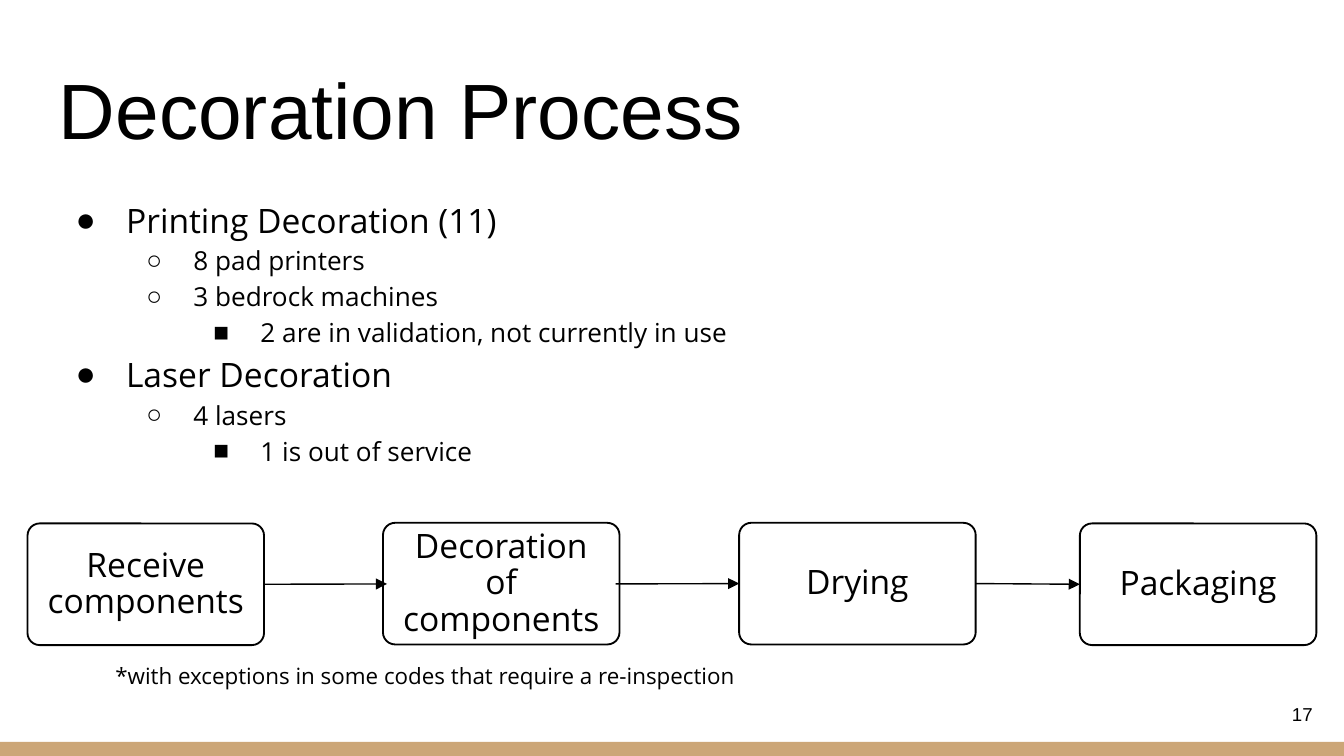
import dataclasses
import typing

import lxml.etree
import pptx
import pptx.dml.color
import pptx.enum.shapes
import pptx.enum.text
import pptx.oxml.ns
import pptx.util

PX = 4572
BLACK = pptx.dml.color.RGBColor(0x00, 0x00, 0x00)
WHITE = pptx.dml.color.RGBColor(0xFF, 0xFF, 0xFF)
TAN = pptx.dml.color.RGBColor(0xCC, 0xA6, 0x77)
SANS = "Open Sans"
ARIAL = "Arial"
ALIGN = pptx.enum.text.PP_ALIGN
ANCHOR = pptx.enum.text.MSO_ANCHOR
SHAPE = pptx.enum.shapes.MSO_SHAPE
LEFT, RIGHT = 1, 3
INSET = 6


@dataclasses.dataclass(frozen=True)
class Step:
    text: str
    left: int
    top: int


@dataclasses.dataclass(frozen=True)
class Item:
    text: str
    level: int = 0


@dataclasses.dataclass(frozen=True)
class Bullet:
    mark: str
    size: int
    hang: int


STEPS = [
    Step("Receive components", 41, 779),
    Step("Decoration of components", 570, 778),
    Step("Drying", 1100, 778),
    Step("Packaging", 1607, 779),
]
ITEMS = [
    Item("Printing Decoration (11)"),
    Item("8 pad printers", 1),
    Item("3 bedrock machines", 1),
    Item("2 are in validation, not currently in use", 2),
    Item("Laser Decoration"),
    Item("4 lasers", 1),
    Item("1 is out of service", 2),
]
BULLETS = [Bullet("●", 18, 75), Bullet("○", 14, 70), Bullet("■", 14, 70)]


def emu(*values: int) -> list[int]:
    return [value * PX for value in values]


def add_tag(parent: typing.Any, tag: str, **attrs: str) -> typing.Any:
    return lxml.etree.SubElement(parent, pptx.oxml.ns.qn(tag), attrs)


def style(para: typing.Any, size: int, font: str, space: float) -> None:
    para.line_spacing = space
    for run in para.runs:
        run.font.size = pptx.util.Pt(size)
        run.font.name = font
        run.font.color.rgb = BLACK


def add_text(shapes: typing.Any, box: tuple[int, int, int, int], text: str,
             size: int, font: str = SANS, align: typing.Any = ALIGN.LEFT,
             anchor: typing.Any = ANCHOR.TOP, space: float = 1.0,
             margin: int = 20) -> typing.Any:
    shape = shapes.add_textbox(*emu(*box))
    frame = shape.text_frame
    frame.word_wrap = True
    frame.vertical_anchor = anchor
    frame.margin_left = frame.margin_right = margin * PX
    frame.margin_top = frame.margin_bottom = margin * PX
    frame.text = text
    for para in frame.paragraphs:
        para.alignment = align
        style(para, size, font, space)
    return shape


def add_step(shapes: typing.Any, step: Step) -> tuple[typing.Any, typing.Any]:
    group = shapes.add_group_shape()
    card = group.shapes.add_shape(
        SHAPE.ROUNDED_RECTANGLE, *emu(step.left, step.top, 352, 181))
    card.adjustments[0] = 0.1
    card.shadow.inherit = False
    card.fill.solid()
    card.fill.fore_color.rgb = WHITE
    card.line.color.rgb = BLACK
    card.line.width = pptx.util.Pt(1)
    label = add_text(
        group.shapes, (step.left + INSET, step.top + INSET, 340, 170),
        step.text, 18, align=ALIGN.CENTER, anchor=ANCHOR.MIDDLE,
        space=0.9, margin=16)
    return card, label


def add_arrow(shapes: typing.Any, start: typing.Any, end: typing.Any) -> None:
    arrow = shapes.add_connector(
        pptx.enum.shapes.MSO_CONNECTOR.STRAIGHT, 0, 0, 0, 0)
    arrow.begin_connect(start, RIGHT)
    arrow.end_connect(end, LEFT)
    arrow.line.color.rgb = BLACK
    arrow.line.width = pptx.util.Pt(0.75)
    add_tag(arrow.line._get_or_add_ln(), "a:tailEnd", type="triangle")
    add_tag(arrow._element.spPr, "a:effectLst")


def add_list(shapes: typing.Any, items: list[Item]) -> None:
    text = "\n".join(item.text for item in items)
    shape = add_text(shapes, (68, 268, 1086, 424), text, 18)
    for para, item in zip(shape.text_frame.paragraphs, items):
        bullet = BULLETS[item.level]
        para.level = item.level
        style(para, bullet.size, SANS, 1.15)
        props = para._p.get_or_add_pPr()
        props.set("marL", str((item.level + 1) * 100 * PX))
        props.set("indent", str(-bullet.hang * PX))
        color = add_tag(props, "a:buClr")
        add_tag(color, "a:srgbClr", val=str(BLACK))
        add_tag(props, "a:buFont", typeface=ARIAL)
        add_tag(props, "a:buChar", char=bullet.mark)


def main() -> None:
    deck = pptx.Presentation()
    deck.slide_width, deck.slide_height = emu(2000, 1125)
    shapes = deck.slides.add_slide(deck.slide_layouts[6]).shapes

    band = shapes.add_shape(SHAPE.RECTANGLE, *emu(0, 1104, 2000, 21))
    band.shadow.inherit = False
    band.fill.solid()
    band.fill.fore_color.rgb = TAN
    band.line.fill.background()

    add_text(shapes, (68, 69, 1864, 182), "Decoration Process", 42, ARIAL,
             anchor=ANCHOR.BOTTOM)
    add_text(shapes, (1853, 1020, 120, 86), "17", 10, ARIAL, ALIGN.RIGHT,
             ANCHOR.MIDDLE)

    parts = [add_step(shapes, step) for step in STEPS]
    receive, _ = parts[0]
    _, decor = parts[1]
    dry, _ = parts[2]
    pack, _ = parts[3]
    for start, end in [(receive, decor), (dry, pack), (decor, dry)]:
        add_arrow(shapes, start, end)

    add_list(shapes, ITEMS)
    add_text(shapes, (152, 960, 1640, 72),
             "*with exceptions in some codes that require a re-inspection",
             12, space=1.15)
    deck.save("out.pptx")


if __name__ == "__main__":
    main()
